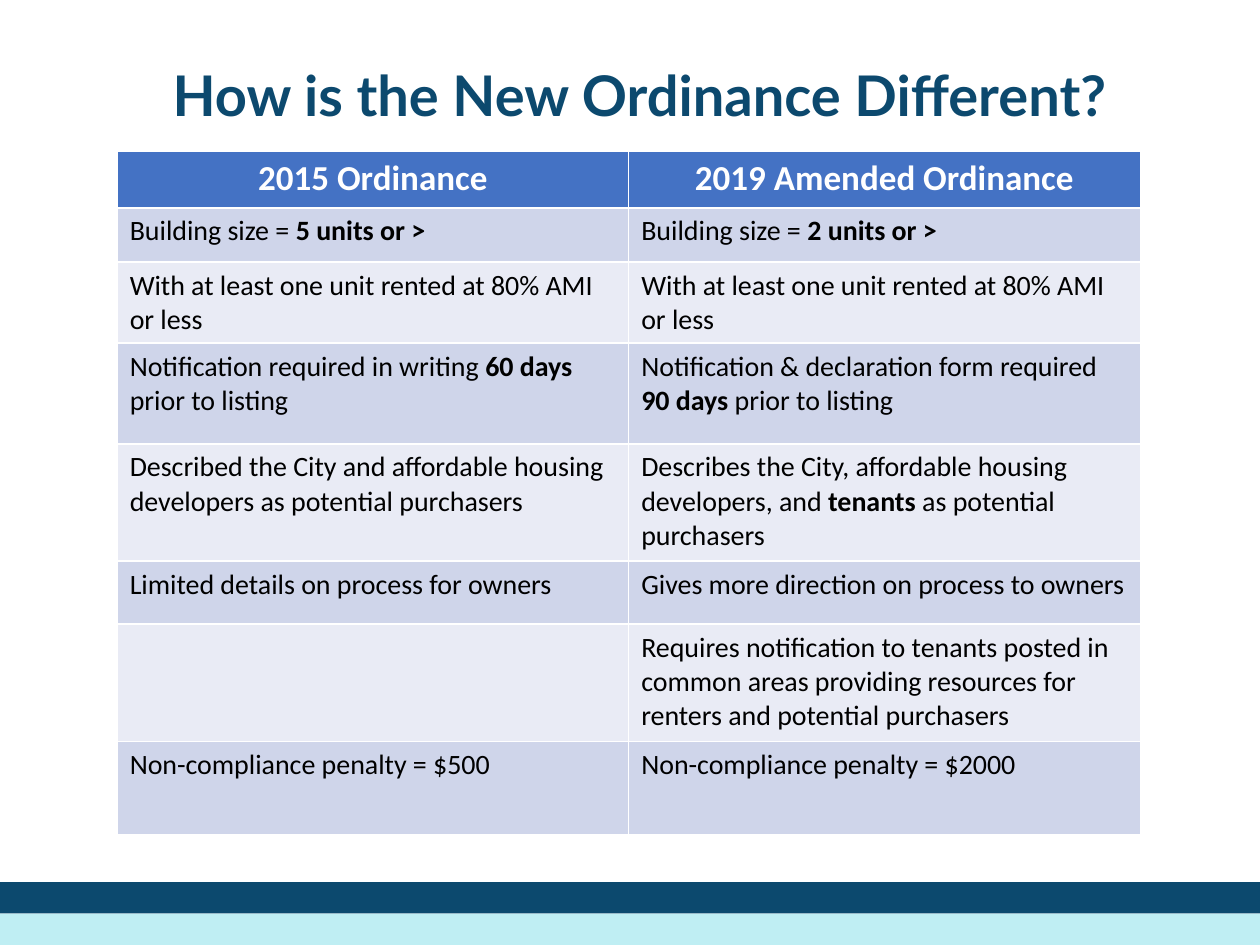
from pptx import Presentation
from pptx.dml.color import RGBColor
from pptx.enum.shapes import MSO_SHAPE
from pptx.enum.text import MSO_ANCHOR, PP_ALIGN
from pptx.util import Inches, Pt

RECTANGLE = MSO_SHAPE.RECTANGLE
TOP = MSO_ANCHOR.TOP
CENTER = PP_ALIGN.CENTER

NAVY = RGBColor(0x0C, 0x49, 0x6E)
AQUA = RGBColor(0xBF, 0xEE, 0xF3)
HEADER_BLUE = RGBColor(0x44, 0x72, 0xC4)
BAND_DARK = RGBColor(0xCF, 0xD5, 0xEA)
BAND_LIGHT = RGBColor(0xE9, 0xEB, 0xF5)
WHITE = RGBColor(0xFF, 0xFF, 0xFF)
BLACK = RGBColor(0x00, 0x00, 0x00)

TITLE = "How is the New Ordinance Different? "
HEADERS = ("2015 Ordinance", "2019 Amended Ordinance")
HEADER_HEIGHT = 0.45
COLUMN_WIDTH = 4.06

# Row height in inches, 2015 text, 2019 text; ** surrounds bold words.
COMPARISONS = [
    (0.43, "Building size = **5 units or >**", "Building size = **2 units or >**"),
    (0.64, "With at least one unit rented at 80% AMI or less",
     "With at least one unit rented at 80% AMI or less"),
    (0.8, "Notification required in writing **60 days **prior to listing",
     "Notification & declaration form required **90 days **prior to listing"),
    (0.93, "Described the City and affordable housing developers as potential purchasers",
     "Describes the City, affordable housing developers, and **tenants **as potential purchasers"),
    (0.5, "Limited details on process for owners",
     "Gives more direction on process to owners"),
    (0.93, "",
     "Requires notification to tenants posted in common areas providing resources "
     "for renters and potential purchasers"),
    (0.74, "Non-compliance penalty = $500", "Non-compliance penalty = $2000"),
]


def style_font(font, name, size, color, bold):
    font.name = name
    font.size = Pt(size)
    font.color.rgb = color
    font.bold = bold


def add_footer_band(slide, top, color):
    band = slide.shapes.add_shape(
        RECTANGLE, 0, Inches(top), Inches(10), Inches(0.25))
    band.shadow.inherit = False
    band.fill.solid()
    band.fill.fore_color.rgb = color
    band.line.fill.background()


def format_title(slide):
    title = slide.shapes.title
    title.left, title.top = Inches(0.66), Inches(0.43)
    title.width, title.height = Inches(8.94), Inches(0.64)
    frame = title.text_frame
    frame.text = TITLE
    frame.vertical_anchor = TOP
    heading = frame.paragraphs[0]
    heading.alignment = CENTER
    style_font(heading.runs[0].font, "Lato", 32, NAVY, True)


def fill_cell(cell, text, fill, size, color, bold=False):
    """Fill a cell, switching bold at each ** in the text."""
    cell.fill.solid()
    cell.fill.fore_color.rgb = fill
    paragraph = cell.text_frame.paragraphs[0]
    for index, part in enumerate(text.split("**")):
        if part:
            run = paragraph.add_run()
            run.text = part
            style_font(run.font, "Calibri", size, color, bold or index % 2 == 1)


def add_comparison_table(slide):
    heights = [HEADER_HEIGHT] + [height for height, *_ in COMPARISONS]
    table = slide.shapes.add_table(
        len(heights), len(HEADERS), Inches(0.93), Inches(1.2),
        Inches(COLUMN_WIDTH * len(HEADERS)), Inches(sum(heights))).table
    for column in table.columns:
        column.width = Inches(COLUMN_WIDTH)
    for row, height in zip(table.rows, heights):
        row.height = Inches(height)

    for column, header in enumerate(HEADERS):
        cell = table.cell(0, column)
        fill_cell(cell, header, HEADER_BLUE, 20, WHITE, bold=True)
        cell.text_frame.paragraphs[0].alignment = CENTER
    for row, (_, *texts) in enumerate(COMPARISONS, start=1):
        band = BAND_DARK if row % 2 else BAND_LIGHT
        for column, text in enumerate(texts):
            fill_cell(table.cell(row, column), text, band, 16, BLACK)


def main():
    presentation = Presentation()
    presentation.slide_width = Inches(10)
    presentation.slide_height = Inches(7.5)
    title_only = presentation.slide_layouts[5]
    slide = presentation.slides.add_slide(title_only)
    add_footer_band(slide, 7.25, AQUA)
    add_footer_band(slide, 7, NAVY)
    format_title(slide)
    add_comparison_table(slide)
    presentation.save("out.pptx")


if __name__ == "__main__":
    main()
